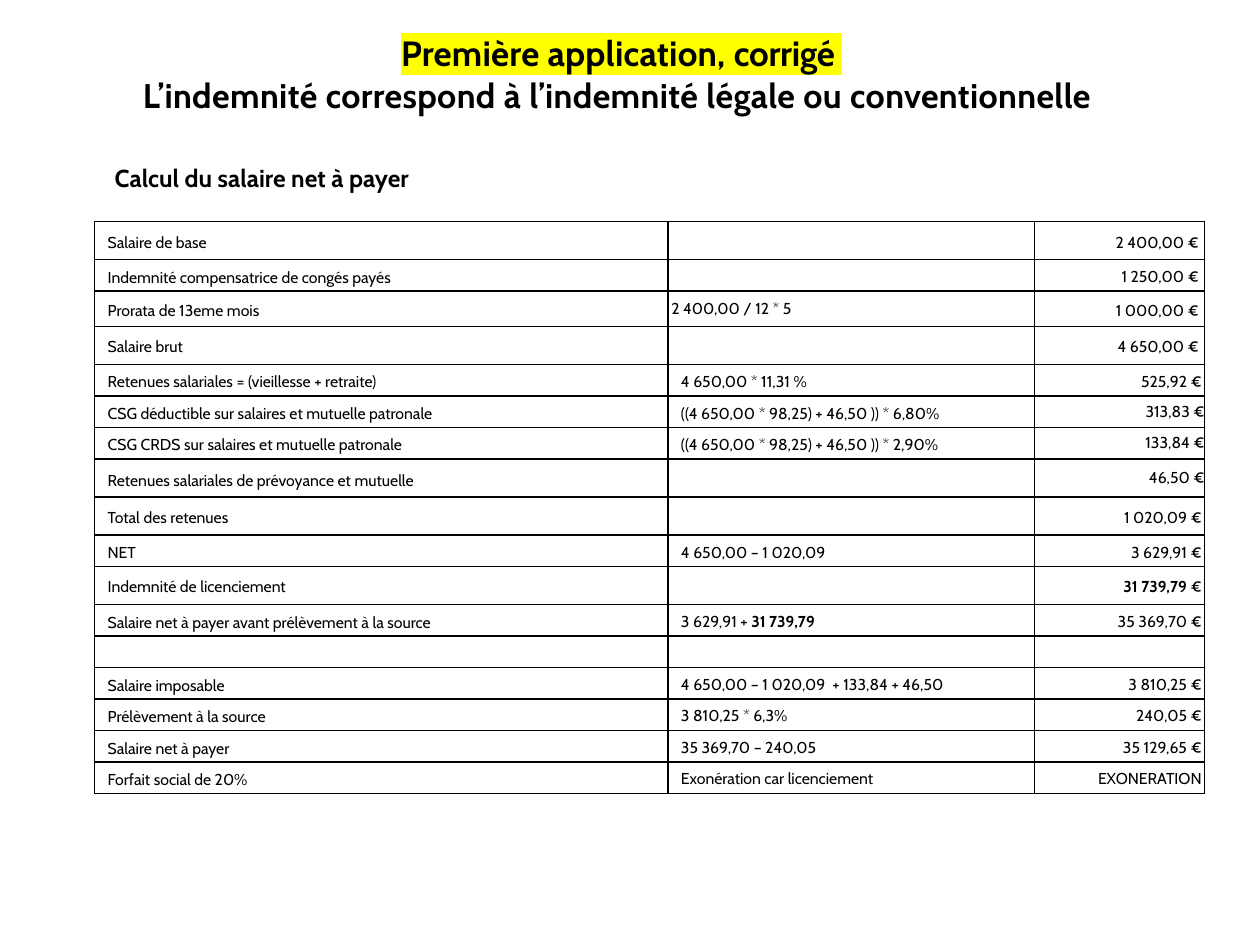
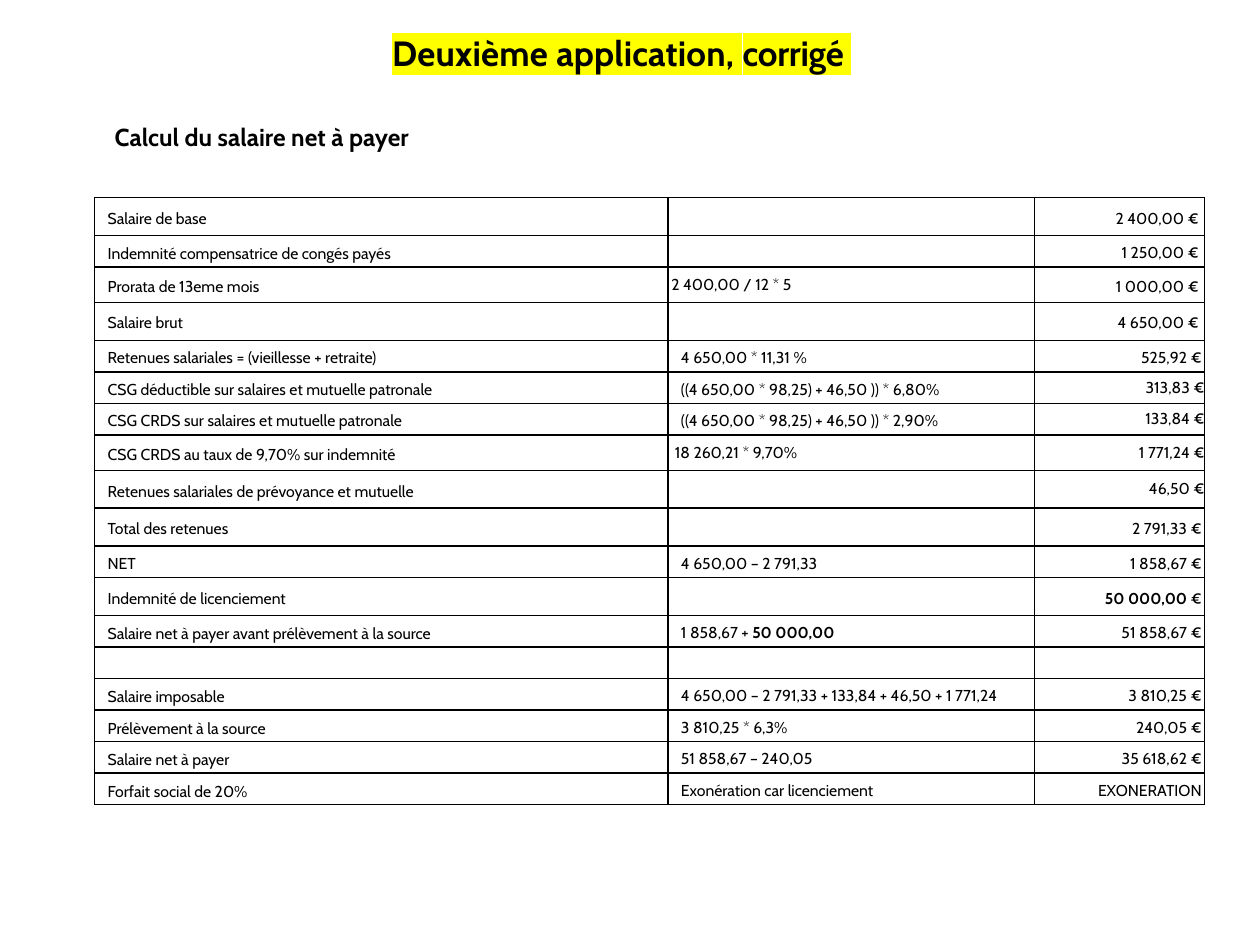
from dataclasses import dataclass

from lxml import etree
from pptx import Presentation
from pptx.dml.color import RGBColor
from pptx.enum import text
from pptx.oxml.ns import qn
from pptx.util import Pt

COLOURS = {"ink": "000000", "highlight": "FFFF00"}
FONT = "Cabin"
TITLE_BOX = (22.3, 23, 666)
TABLE_LEFT = 54
COLUMN_WIDTHS = (327.6, 209.5, 97.2)
TALL, MEDIUM, SHORT = 21.7, 20.2, 18
INDENT = 7.5
VALUE_MARGIN = 1.7
HEADING_GAP = 28.4
LEFT, CENTER, RIGHT = (text.PP_ALIGN.LEFT, text.PP_ALIGN.CENTER, text.PP_ALIGN.RIGHT)


@dataclass
class Row:
    label: str = ""
    formula: str = ""
    value: str = ""
    height: float = SHORT
    label_line: float = 13
    label_before: float = 4.3
    value_before: float = 4.3
    value_margin: float = VALUE_MARGIN
    formula_indent: float = INDENT
    formula_plain: bool = False
    value_plain: bool = False


EARNINGS = [
    Row("Salaire de base", "", "2 400,00 €", TALL, label_before=4.8,
        value_before=4.8, value_margin=2 * VALUE_MARGIN),
    Row("Indemnité compensatrice de congés payés", "", "1 250,00 €", label_line=14,
        label_before=4, value_before=4.8, value_margin=2 * VALUE_MARGIN),
    Row("Prorata de 13eme mois", "2 400,00 / 12 * 5", "1 000,00 €", MEDIUM,
        value_margin=2 * VALUE_MARGIN, formula_indent=2, formula_plain=True),
    Row("Salaire brut", "", "4 650,00 €", TALL, value_margin=2 * VALUE_MARGIN),
]
DEDUCTIONS = [
    Row("Retenues salariales = (vieillesse + retraite)", "4 650,00 * 11,31 %", "525,92 €"),
    Row("CSG déductible sur salaires et mutuelle patronale",
        "((4 650,00 * 98,25) + 46,50 )) * 6,80%", "313,83 €", value_margin=0, value_plain=True),
    Row("CSG CRDS sur salaires et mutuelle patronale",
        "((4 650,00 * 98,25) + 46,50 )) * 2,90%", "133,84 €", value_margin=0, value_plain=True),
]
SEVERANCE_TAX = [
    Row("CSG CRDS au taux de 9,70% sur indemnité", "18 260,21 * 9,70%", "1 771,24 €", MEDIUM,
        label_line=14, value_margin=0, formula_indent=4, formula_plain=True, value_plain=True),
]
HEALTH_COVER = [
    Row("Retenues salariales de prévoyance et mutuelle", "", "46,50 €", TALL,
        label_line=14, value_margin=0, value_plain=True),
]


def settlement_rows(withheld, net, severance, before_tax, taxable_formula, net_pay):
    return [
        Row("Total des retenues", "", f"{withheld} €", TALL),
        Row("NET", f"4 650,00 – {withheld}", f"{net} €"),
        Row("Indemnité de licenciement", "", f"|{severance} |€", TALL),
        Row("Salaire net à payer avant prélèvement à la source",
            f"{net} + |{severance}", f"{before_tax} €", label_line=14),
        Row(),
        Row("Salaire imposable", taxable_formula, "3 810,25 €", label_line=14),
        Row("Prélèvement à la source", "3 810,25 * 6,3%", "240,05 €", label_line=14),
        Row("Salaire net à payer", f"{before_tax} – 240,05", f"{net_pay} €", label_line=14),
        Row("Forfait social de 20%", "Exonération car licenciement", "EXONERATION",
            label_line=14),
    ]


def add_run(paragraph, words, size=9, bold=False, tracking=0, highlight=None):
    run = paragraph.add_run()
    run.text = words
    run.font.size = Pt(size)
    run.font.bold = bold
    run.font.fill.solid()
    run.font.fill.fore_color.rgb = RGBColor.from_string(COLOURS["ink"])
    run.font.name = FONT
    properties = run._r.get_or_add_rPr()
    if tracking:
        properties.set("spc", str(round(tracking * 100)))
    if highlight:
        mark = etree.Element(qn("a:highlight"))
        etree.SubElement(mark, qn("a:srgbClr"), val=COLOURS[highlight])
        properties.find(qn("a:solidFill")).addnext(mark)


def format_paragraph(paragraph, align=LEFT, line=None, before=0, after=0, indent=0):
    paragraph.alignment = align
    if line:
        paragraph.line_spacing = Pt(line)
    paragraph.space_before = Pt(before)
    paragraph.space_after = Pt(after)
    properties = paragraph._p.get_or_add_pPr()
    properties.set("marL", str(Pt(indent)))
    properties.set("indent", "0")


def place_placeholder(shape, left, top, width, height):
    shape.left, shape.top, shape.width, shape.height = map(Pt, (left, top, width, height))
    frame = shape.text_frame
    frame.margin_left = frame.margin_top = frame.margin_right = frame.margin_bottom = 0
    frame.vertical_anchor = text.MSO_ANCHOR.TOP
    frame.auto_size = text.MSO_AUTO_SIZE.NONE
    frame.word_wrap = True
    return frame


def add_headings(slide, box, title_runs, subtitle):
    left, top, width = box
    height = 42.8 if subtitle else 19
    frame = place_placeholder(slide.shapes.title, left, top, width, height)
    paragraph = frame.paragraphs[0]
    format_paragraph(paragraph, CENTER, line=19)
    for words, tracking in title_runs:
        add_run(paragraph, words, 20, True, tracking, "highlight")
    if subtitle:
        paragraph = frame.add_paragraph()
        format_paragraph(paragraph, CENTER, line=23, before=0.8)
        add_run(paragraph, subtitle, 19.5, True, 0.2)

    offset = 43.2
    frame = place_placeholder(slide.placeholders[1], left + offset,
                              top + height + HEADING_GAP, width - offset, 16)
    paragraph = frame.paragraphs[0]
    format_paragraph(paragraph, line=16)
    etree.SubElement(paragraph._p.get_or_add_pPr(), qn("a:buNone"))
    add_run(paragraph, "Calcul du salaire net à payer", 14, True)


def add_borders(cell):
    properties = cell._tc.get_or_add_tcPr()
    for position, side in enumerate(("lnL", "lnR", "lnT", "lnB")):
        border = etree.Element(qn(f"a:{side}"), w=str(Pt(0.95)))
        fill = etree.SubElement(border, qn("a:solidFill"))
        etree.SubElement(fill, qn("a:srgbClr"), val=COLOURS["ink"])
        properties.insert(position, border)


def fill_cell(cell, words, margin=0, **layout):
    cell.margin_left = cell.margin_top = cell.margin_bottom = 0
    cell.margin_right = Pt(margin)
    cell.vertical_anchor = text.MSO_ANCHOR.MIDDLE
    cell.fill.background()
    add_borders(cell)
    paragraph = cell.text_frame.paragraphs[0]
    if not words:
        etree.SubElement(paragraph._p, qn("a:endParaRPr"), sz="900")
        return
    format_paragraph(paragraph, **layout)
    for position, part in enumerate(words.split("|")):
        if part:
            add_run(paragraph, part, bold=position % 2 == 1)


def spacing(plain, before=4.3):
    return {} if plain else {"line": 13, "before": before, "after": 4.8}


def add_pay_table(slide, left, top, rows):
    height = sum(row.height for row in rows)
    table = slide.shapes.add_table(len(rows), len(COLUMN_WIDTHS), Pt(left), Pt(top),
                                   Pt(sum(COLUMN_WIDTHS)), Pt(height)).table
    table.first_row = table.horz_banding = False
    for column, width in zip(table.columns, COLUMN_WIDTHS):
        column.width = Pt(width)
    for table_row, row in zip(table.rows, rows):
        table_row.height = Pt(row.height)
        label, formula, value = table_row.cells
        fill_cell(label, row.label, indent=INDENT, line=row.label_line,
                  before=row.label_before, after=4.8)
        fill_cell(formula, row.formula, indent=row.formula_indent,
                  **spacing(row.formula_plain))
        fill_cell(value, row.value, row.value_margin, align=RIGHT,
                  **spacing(row.value_plain, row.value_before))


def add_answer_slide(presentation, title_runs, table_top, rows, subtitle=None):
    slide = presentation.slides.add_slide(presentation.slide_layouts[1])
    add_headings(slide, TITLE_BOX, title_runs, subtitle)
    add_pay_table(slide, TABLE_LEFT, table_top, rows)


def main():
    presentation = Presentation()
    presentation.slide_width, presentation.slide_height = Pt(720), Pt(540)
    add_answer_slide(
        presentation, [("Première application, ", 0.1), ("corrigé ", -0.2)], 126.7,
        EARNINGS + DEDUCTIONS + HEALTH_COVER + settlement_rows(
            "1 020,09", "3 629,91", "31 739,79", "35 369,70",
            "4 650,00 – 1 020,09  + 133,84 + 46,50", "35 129,65"),
        "L’indemnité correspond à l’indemnité légale ou conventionnelle ")
    add_answer_slide(
        presentation, [("Deuxième application, ", 0.1), ("corrigé ", -0.2)], 113,
        EARNINGS + DEDUCTIONS + SEVERANCE_TAX + HEALTH_COVER + settlement_rows(
            "2 791,33", "1 858,67", "50 000,00", "51 858,67",
            "4 650,00 – 2 791,33 + 133,84 + 46,50 + 1 771,24", "35 618,62"))
    presentation.save("out.pptx")


if __name__ == "__main__":
    main()
